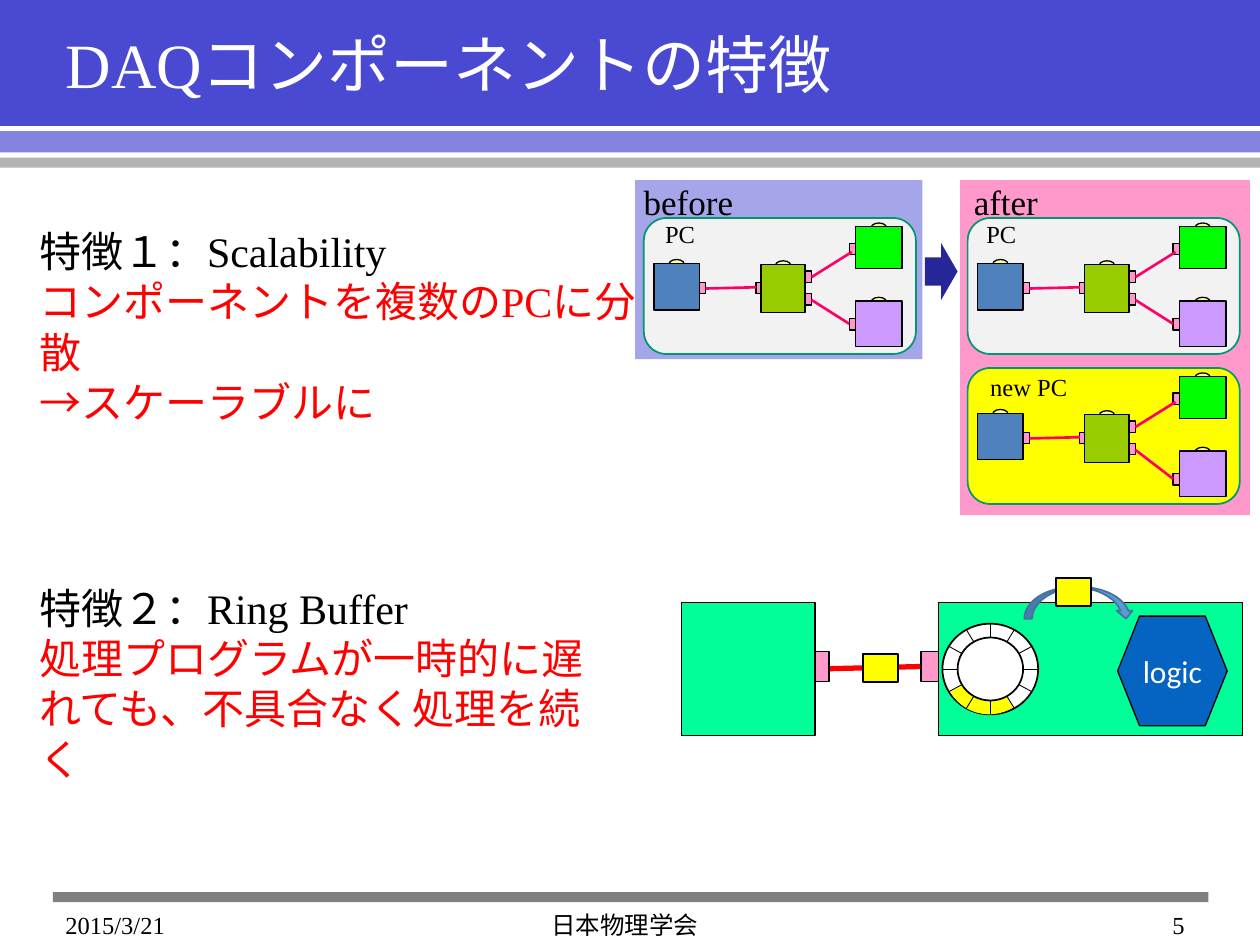
import math
import pptx
import pptx.util
import pptx.dml.color
import pptx.enum.shapes
import pptx.enum.text
from lxml import etree

SHAPE = pptx.enum.shapes.MSO_SHAPE
ALIGN = pptx.enum.text.PP_ALIGN
ANCHOR = pptx.enum.text.MSO_ANCHOR
NS = "{http://schemas.openxmlformats.org/drawingml/2006/main}"
W, H = 10, 7.5
SERIF = "Times New Roman"
COLORS = {
    "black": "000000", "white": "FFFFFF", "red": "FF0000", "yellow": "FFFF00",
    "banner": "4949D1", "stripe": "8484E0", "silver": "B2B2B2", "rule": "808080",
    "before": "A5A5E9", "pink": "FF99CC", "panel": "F2F2F2", "panel_edge": "009771",
    "handle": "FFFF99", "green": "00FF00", "olive": "99CC00", "blue": "4F81BD",
    "purple": "CC99FF", "link": "FF0066", "navy": "262699", "mint": "00FF99",
    "logic": "0563C1", "arc": "5B9BD5", "arc_edge": "43739E",
}

# Content
TITLE = "DAQコンポーネントの特徴"
FEATURES = [
    ((0.21, 1.74, 5.08, 1.31),
     ["特徴１：Scalability", "コンポーネントを複数のPCに分散", "→スケーラブルに"]),
    ((0.21, 4.57, 4.78, 1.31),
     ["特徴２：Ring Buffer", "処理プログラムが一時的に遅れても、不具合なく処理を続く"]),
]
FOOTER = [("2015/3/21", 0.42, 2.08, ALIGN.LEFT),
          ("日本物理学会", 3.11, 3.7, ALIGN.CENTER),
          ("5", 7.42, 2.08, ALIGN.RIGHT)]
BARS = [(0, 0, W, 1, "banner"), (0, 1.04, W, 0.17, "stripe"),
        (0, 1.25, W, 0.08, "silver"), (0.42, 7.08, 9.17, 0.08, "rule")]
STAGES = [("before", "before", (5.04, 1.43, 2.28, 1.42), -0.03),
          ("after", "pink", (7.62, 1.43, 2.3, 2.66), 0.01)]

# PC panels: label, left, top, fill, label shift, extra drop of the last port
PANELS = [("PC", 5.11, 1.73, "panel", (0.07, -0.04), 0),
          ("PC", 7.68, 1.73, "panel", (0.05, -0.04), 0),
          ("new PC", 7.68, 2.92, "yellow", (0.08, -0.02), 0.04)]
# Components inside a panel: box, colour, port corners
COMPONENTS = [((1.68, 0.07, 0.37, 0.33), "green", [(1.63, 0.2)]),
              ((0.93, 0.37, 0.35, 0.38), "olive", [(0.89, 0.51), (1.25, 0.42), (1.25, 0.6)]),
              ((0.08, 0.36, 0.36, 0.37), "blue", [(0.41, 0.51)]),
              ((1.68, 0.66, 0.37, 0.36), "purple", [(1.63, 0.8)])]
LINKS = [(0.49, 0.56, 0.89, 0.55), (1.33, 0.47, 1.65, 0.27), (1.33, 0.65, 1.63, 0.84)]

prs = pptx.Presentation()
prs.slide_width, prs.slide_height = pptx.util.Inches(W), pptx.util.Inches(H)
slide = prs.slides.add_slide(prs.slide_layouts[3])


def rgb(name):
    return pptx.dml.color.RGBColor.from_string(COLORS[name])


def inches(*values):
    return [pptx.util.Inches(v) for v in values]


def add_box(x, y, w, h, fill, kind=SHAPE.RECTANGLE, line=None, width=0.75):
    sp = slide.shapes.add_shape(kind, *inches(x, y, w, h))
    sp.shadow.inherit = False
    sp.fill.solid()
    sp.fill.fore_color.rgb = rgb(fill)
    if line:
        sp.line.color.rgb = rgb(line)
        sp.line.width = pptx.util.Pt(width)
    else:
        sp.line.fill.background()
    return sp


def add_line(x1, y1, x2, y2, color, width):
    cn = slide.shapes.add_connector(pptx.enum.shapes.MSO_CONNECTOR.STRAIGHT,
                                    *inches(x1, y1, x2, y2))
    cn.line.color.rgb = rgb(color)
    cn.line.width = pptx.util.Pt(width)
    etree.SubElement(cn._element.spPr, NS + "effectLst")


def style(p, size, color, align=ALIGN.LEFT, font=SERIF):
    p.alignment = align
    for r in p.runs:
        r.font.size = pptx.util.Pt(size)
        r.font.name = font
        r.font.color.rgb = rgb(color)


def add_text(text, x, y, w, h, size, align=ALIGN.LEFT):
    tf = slide.shapes.add_textbox(*inches(x, y, w, h)).text_frame
    tf.word_wrap = True
    tf.text = text
    style(tf.paragraphs[0], size, "black", align)


def place(sp, x, y, w, h):
    sp.left, sp.top, sp.width, sp.height = inches(x, y, w, h)
    sp.text_frame.auto_size = pptx.enum.text.MSO_AUTO_SIZE.NONE
    sp.text_frame.word_wrap = True


# Banner, rules and footer
for x, y, w, h, color in BARS:
    add_box(x, y, w, h, color)
for text, x, w, align in FOOTER:
    add_text(text, x, 7.17, w, 0.33, 14, align)

# Title, raised above the banner
title, *bodies = slide.placeholders
place(title, 0.42, 0, 9.31, 1)
title.text_frame.text = TITLE
title.text_frame.vertical_anchor = ANCHOR.MIDDLE
style(title.text_frame.paragraphs[0], 36, "white")
title._element.getparent().append(title._element)

# Feature texts: black heading, red explanation
for sp, (area, lines) in zip(bodies, FEATURES):
    place(sp, *area)
    sp.text_frame.text = "\n".join(lines)
    for i, p in enumerate(sp.text_frame.paragraphs):
        style(p, 24, "red" if i else "black")
        p.space_before = pptx.util.Pt(0)
        pPr = p._p.get_or_add_pPr()
        pPr.set("marL", "0")
        pPr.set("indent", "0")
        etree.SubElement(pPr, NS + "buNone")

# Before and after
for text, color, (x, y, w, h), shift in STAGES:
    add_box(x, y, w, h, color)
    add_text(text, x + shift, y - 0.05, 1.58, 0.44, 20)
add_box(7.34, 1.93, 0.26, 0.45, "navy", SHAPE.RIGHT_ARROW)

for label, left, top, fill, (dx, dy), drop in PANELS:
    add_box(left, top, 2.16, 1.08, fill, SHAPE.ROUNDED_RECTANGLE, "panel_edge", 1)
    for (x, y, w, h), color, ports in COMPONENTS:
        shift = drop if color == "purple" else 0
        for px, py in ports:
            add_box(left + px, top + py + shift, 0.08, 0.09, "pink", line="black")
        add_box(left + x + w / 2 - 0.06, top + y - 0.03, 0.12, 0.07, "handle",
                SHAPE.OVAL, "black")
        add_box(left + x, top + y, w, h, color, line="black")
    for x1, y1, x2, y2 in LINKS:
        end = drop if (x1, y1) == LINKS[-1][:2] else 0
        add_line(left + x1, top + y1, left + x2, top + y2 + end, "link", 1.5)
    add_text(label, left + dx, top + dy, 1.05, 0.34, 14)

# Sender and receiver
add_line(6.47, 5.31, 7.31, 5.29, "red", 3)
for x in (6.32, 7.31):
    add_box(x, 5.17, 0.26, 0.24, "pink", line="black")
for x, w in ((5.41, 1.06), (7.45, 2.41)):
    add_box(x, 4.78, w, 1.06, "mint", line="black")

# Ring buffer with twelve slots, three of them filled
cx, cy, rx, ry = 7.86, 5.31, 0.38, 0.36
add_box(cx - rx, cy - ry, 2 * rx, 2 * ry, "white", SHAPE.OVAL, "black", 1)
pie = add_box(7.49, 4.94, 0.72, 0.73, "yellow", SHAPE.PIE)
pie.adjustments[0], pie.adjustments[1] = 35.27, 88.96
for k in range(6):
    a = math.radians(30 * k)
    ex, ey = rx * math.cos(a), ry * math.sin(a)
    add_line(cx - ex, cy - ey, cx + ex, cy + ey, "black", 0.5)
add_box(cx - 0.26, cy - 0.25, 0.52, 0.5, "white", SHAPE.OVAL, "black", 1)

# Logic block and data packets
logic = add_box(8.87, 4.89, 0.87, 0.87, "logic", SHAPE.FLOWCHART_PREPARATION, "black")
tf = logic.text_frame
tf.text = "logic"
tf.word_wrap = False
tf.vertical_anchor = ANCHOR.MIDDLE
style(tf.paragraphs[0], 18, "white", ALIGN.CENTER, "Calibri")
add_box(8.13, 4.66, 0.87, 0.25, "arc", SHAPE.CURVED_DOWN_ARROW, "arc_edge", 1)
for x, y in ((6.85, 5.19), (8.38, 4.59)):
    add_box(x, y, 0.28, 0.22, "yellow", line="black", width=1)

prs.save("out.pptx")
